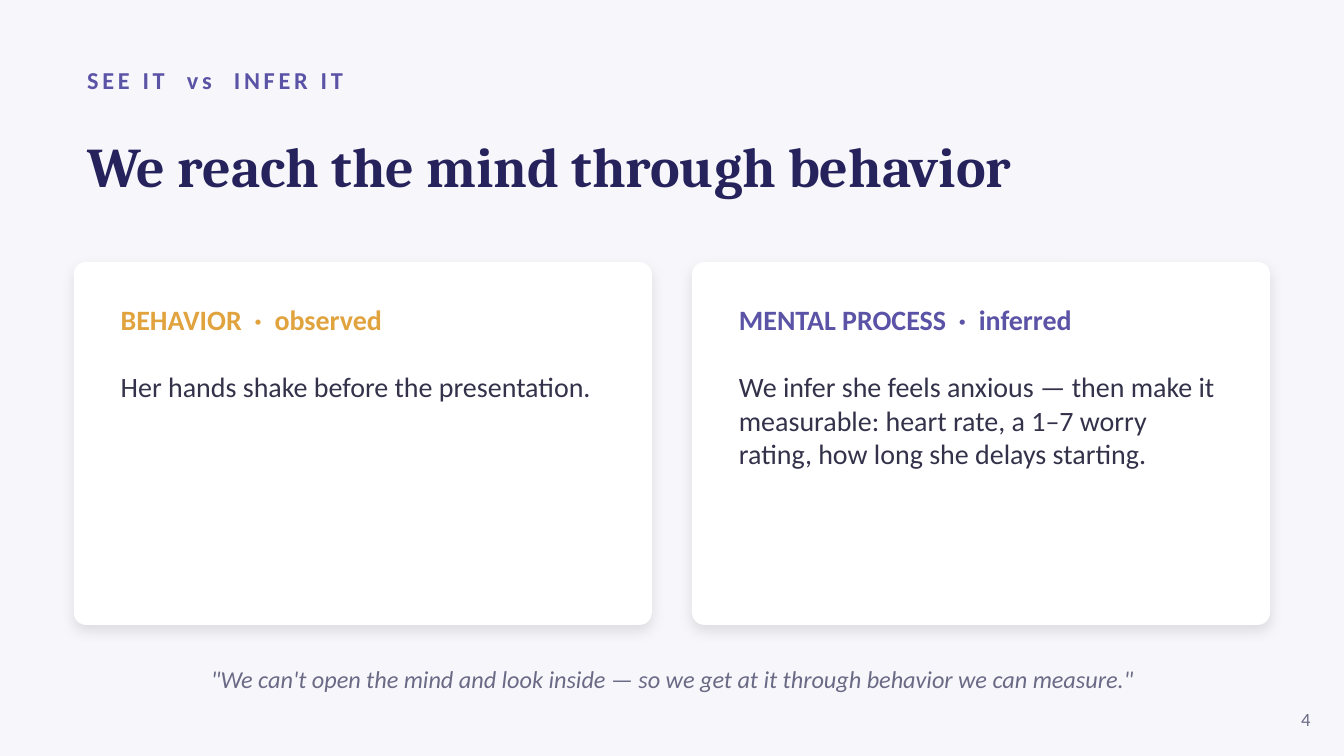
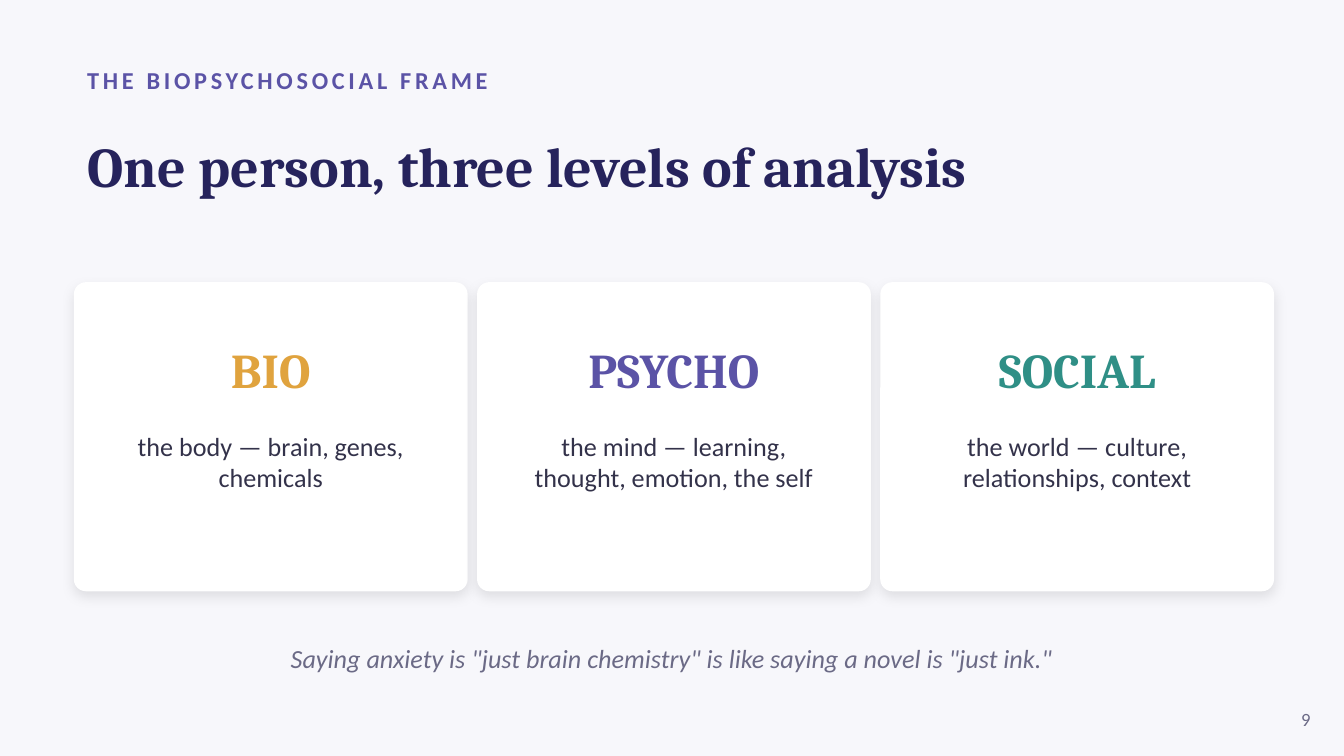
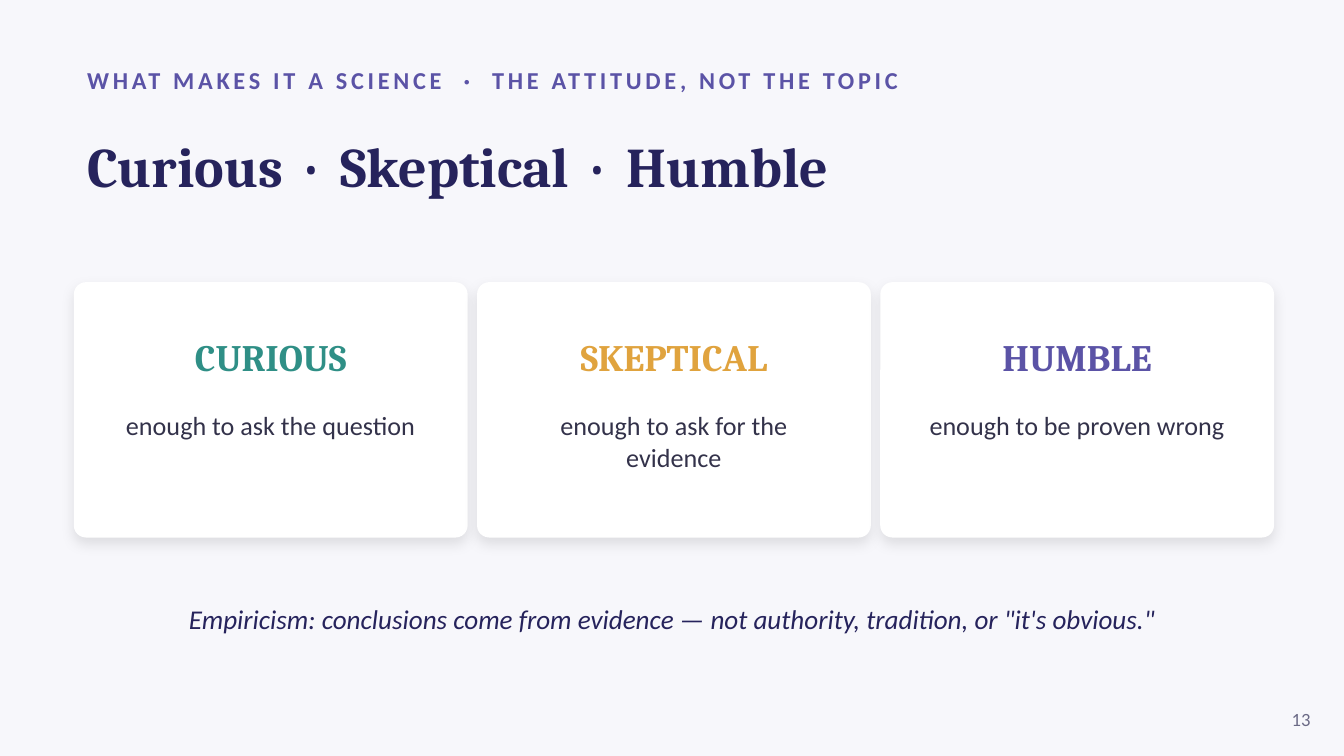
from lxml import etree
from pptx import Presentation
from pptx import util as u
from pptx.dml.color import RGBColor
from pptx.enum import shapes, text
from pptx.oxml import ns

PX = 9144
SERIF, SANS = "Cambria", "Calibri"
PAPER, WHITE, NAVY, INK, GRAY = "F7F7FB", "FFFFFF", "26235C", "33324A", "6B6A86"
GOLD, VIOLET, TEAL = "E0A33E", "5B53A6", "2F8F86"
LEFT, CENTER, RIGHT = text.PP_ALIGN.LEFT, text.PP_ALIGN.CENTER, text.PP_ALIGN.RIGHT
TOP, MIDDLE = text.MSO_ANCHOR.TOP, text.MSO_ANCHOR.MIDDLE


def rgb(color):
    return RGBColor.from_string(color)


def write(sp, box, paragraphs, size, font=SANS, align=LEFT, anchor=MIDDLE,
          bold=False, italic=False, spacing=0, gap=0):
    sp.left, sp.top, sp.width, sp.height = [v * PX for v in box]
    tf = sp.text_frame
    tf.word_wrap = True
    tf.auto_size = text.MSO_AUTO_SIZE.NONE
    tf.vertical_anchor = anchor
    for i, (words, color) in enumerate(paragraphs):
        p = tf.add_paragraph() if i else tf.paragraphs[0]
        p.alignment = align
        if i:
            p.space_before = u.Pt(gap)
        r = p.add_run()
        r.text = words
        r.font.name, r.font.size = font, u.Pt(size)
        r.font.bold, r.font.italic = bold and i == 0, italic
        r.font.color.rgb = rgb(color)
        if spacing:
            r.font._element.set("spc", str(spacing * 100))


prs = Presentation()
prs.slide_width = 1000 * PX
prs.slide_height = prs.slide_width * 9 // 16
fill = prs.slide_master.background.fill
fill.solid()
fill.fore_color.rgb = rgb(PAPER)

slides = [
    dict(number="4", kicker="SEE IT  vs  INFER IT",
         title="We reach the mind through behavior",
         top=195, width=430, height=270, pitch=460,
         cards=[("BEHAVIOR  ·  observed", GOLD, "Her hands shake before the presentation."),
                ("MENTAL PROCESS  ·  inferred", VIOLET,
                 "We infer she feels anxious — then make it measurable: heart rate, "
                 "a 1–7 worry rating, how long she delays starting.")],
         closing="\"We can't open the mind and look inside — so we get at it "
                 "through behavior we can measure.\"",
         closing_top=485, closing_height=40, closing_size=13, closing_color=GRAY),
    dict(number="9", kicker="THE BIOPSYCHOSOCIAL FRAME",
         title="One person, three levels of analysis",
         top=210, width=293, height=230, pitch=300,
         head_top=245, head_height=60, head_size=26, body_height=110,
         cards=[("BIO", GOLD, "the body — brain, genes, chemicals"),
                ("PSYCHO", VIOLET, "the mind — learning, thought, emotion, the self"),
                ("SOCIAL", TEAL, "the world — culture, relationships, context")],
         closing="Saying anxiety is \"just brain chemistry\" is like saying a novel is \"just ink.\"",
         closing_top=470, closing_height=40, closing_size=14, closing_color=GRAY),
    dict(number="13", kicker="WHAT MAKES IT A SCIENCE  ·  THE ATTITUDE, NOT THE TOPIC",
         title="Curious  ·  Skeptical  ·  Humble",
         top=210, width=293, height=190, pitch=300,
         head_top=240, head_height=50, head_size=20, body_height=90,
         cards=[("CURIOUS", TEAL, "enough to ask the question"),
                ("SKEPTICAL", GOLD, "enough to ask for the evidence"),
                ("HUMBLE", VIOLET, "enough to be proven wrong")],
         closing="Empiricism: conclusions come from evidence — not authority, "
                 "tradition, or \"it's obvious.\"",
         closing_top=435, closing_height=50, closing_size=14.5, closing_color=NAVY),
]

for d in slides:
    s = prs.slides.add_slide(prs.slide_layouts[5])
    write(s.shapes.title, (55, 78, 890, 90), [(d["title"], NAVY)], 30, SERIF, bold=True)
    write(s.shapes.add_textbox(0, 0, 0, 0), (55, 42, 900, 35),
          [(d["kicker"], VIOLET)], 13, bold=True, spacing=2)

    top, width, height = d["top"], d["width"], d["height"]
    for i, (head, color, body) in enumerate(d["cards"]):
        left = 55 + i * d["pitch"]
        sp = s.shapes.add_shape(shapes.MSO_SHAPE.ROUNDED_RECTANGLE,
                                left * PX, top * PX, width * PX, height * PX)
        sp.adjustments[0] = 9 / min(width, height)
        sp.fill.solid()
        sp.fill.fore_color.rgb = rgb(WHITE)
        sp.line.fill.background()
        sp.shadow.inherit = False
        effects = sp._element.spPr.find(ns.qn("a:effectLst"))
        shadow = etree.SubElement(effects, ns.qn("a:outerShdw"), blurRad=str(u.Pt(7)),
                                  dist=str(u.Pt(3)), dir="5400000", rotWithShape="0")
        black = etree.SubElement(shadow, ns.qn("a:srgbClr"), val="000000")
        etree.SubElement(black, ns.qn("a:alpha"), val="10000")

        if "head_top" in d:
            head_top, head_height = d["head_top"], d["head_height"]
            write(s.shapes.add_textbox(0, 0, 0, 0), (left, head_top, width, head_height),
                  [(head, color)], d["head_size"], SERIF, CENTER, bold=True)
            write(s.shapes.add_textbox(0, 0, 0, 0),
                  (left + 20, head_top + head_height + 10, width - 40, d["body_height"]),
                  [(body, INK)], 14, align=CENTER, anchor=TOP)
        else:
            write(s.shapes.add_textbox(0, 0, 0, 0),
                  (left + 25, top + 25, width - 50, height - 50 + 10 * i),
                  [(head, color), (body, INK)], 15, anchor=TOP, bold=True, gap=18)

    write(s.shapes.add_textbox(0, 0, 0, 0), (55, d["closing_top"], 890, d["closing_height"]),
          [(d["closing"], d["closing_color"])], d["closing_size"], align=CENTER, italic=True)
    write(s.shapes.add_textbox(0, 0, 0, 0), (935, 520, 50, 30),
          [(d["number"], GRAY)], 10, align=RIGHT)

prs.save("out.pptx")
